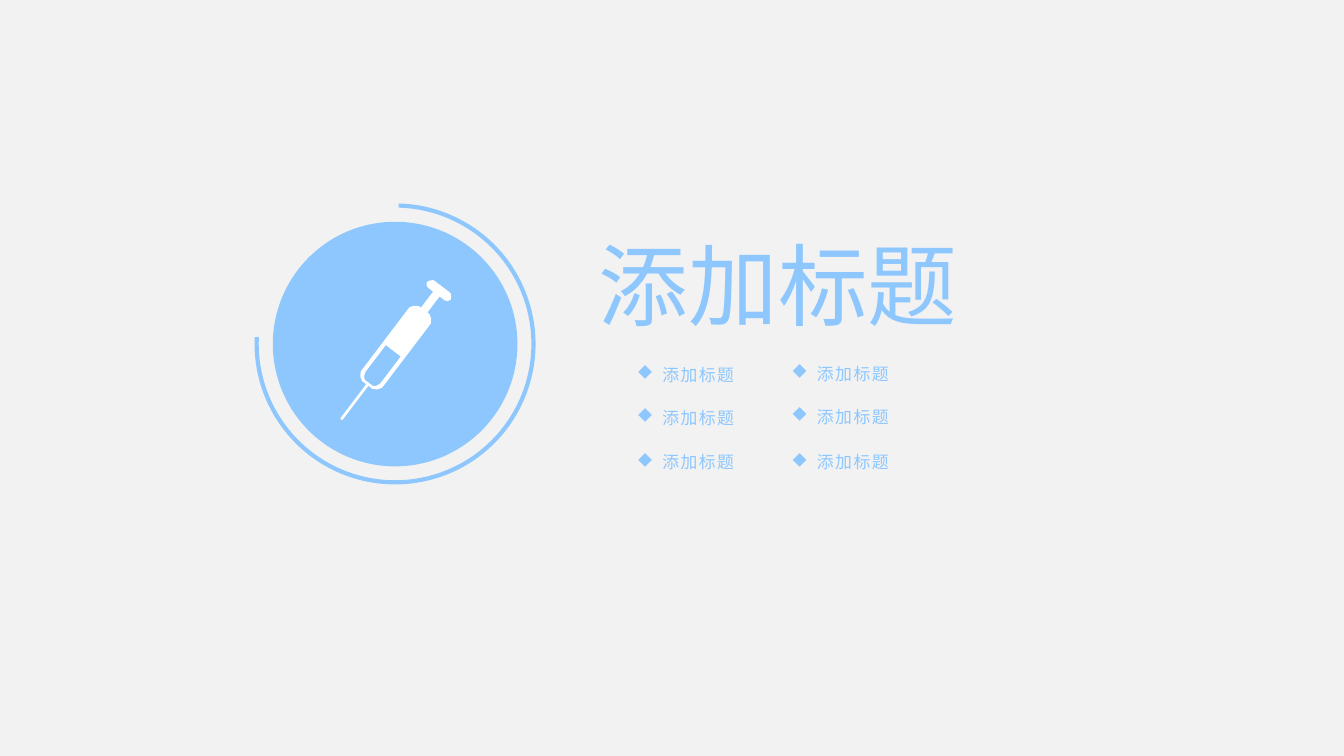
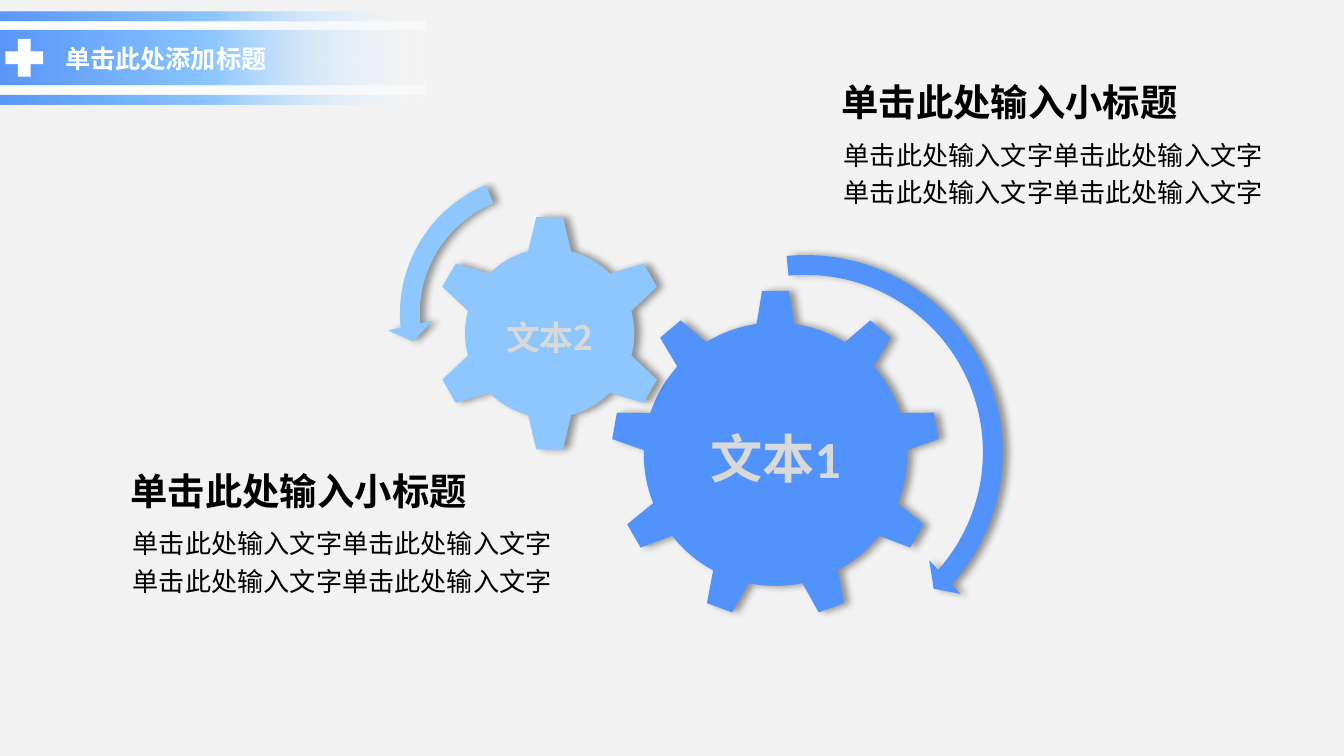
import math

import pptx
import pptx.util
import pptx.dml.color
import pptx.enum.shapes
import pptx.enum.text
import pptx.oxml.ns
from lxml import etree
from pptx.util import Inches

SHAPE = pptx.enum.shapes.MSO_SHAPE
ALIGN = pptx.enum.text.PP_ALIGN
MIDDLE = pptx.enum.text.MSO_ANCHOR.MIDDLE
GROW = pptx.enum.text.MSO_AUTO_SIZE.SHAPE_TO_FIT_TEXT

PAPER, WHITE, BLACK, GREY = "F2F2F2", "FFFFFF", "000000", "D9D9D9"
SKY, BLUE = "8DC7FE", "5293FB"
CJK, LATIN = "Noto Sans CJK SC", "Calibri"
DIAMOND = ("Wingdings", "u")

# Slide 1
COVER_TITLE = "添加标题"
TOPICS = [["添加标题", "添加标题"], ["添加标题", "添加标题"], ["添加标题", "添加标题"]]
TOPIC_COLUMNS = [(4.64, (2.59, 2.91, 3.24)), (5.79, (2.58, 2.9, 3.24))]
# Syringe half-profiles: (distance from needle tip, half-width)
SYRINGE_TIP, SYRINGE_ANGLE = (2.54, 3.12), 52.8
SYRINGE_BODY = [
    (0, 0.01), (0.32, 0.01), (0.32, 0.05), (0.34, 0.08), (0.37, 0.1),
    (0.97, 0.1), (1, 0.08), (1.02, 0.05), (1.02, 0.03), (1.17, 0.03),
    (1.17, 0.08), (1.18, 0.1), (1.2, 0.11), (1.22, 0.1), (1.24, 0.08),
]
SYRINGE_WINDOW = [(0.34, 0.04), (0.36, 0.06), (0.39, 0.07), (0.64, 0.07)]

# Slide 2
PAGE_TITLE = "单击此处添加标题"
BANNER_STOPS = [(0, BLUE, 95), (50, SKY, 100), (100, WHITE, 8)]
STRIPE_STOPS = [(0, WHITE, 100), (50, WHITE, 100), (100, WHITE, 50)]
BANDS = [(0.09, 0.69, BANNER_STOPS), (0.16, 0.06, STRIPE_STOPS), (0.64, 0.06, STRIPE_STOPS)]
GEARS = [
    (dict(text="文本1", size=28, font=LATIN), BLUE,
     dict(center=(5.77, 3.38), teeth=9, root=0.98, tip=1.22, root_half=0.14, tip_half=0.1)),
    (dict(text="文本2", size=18, font=CJK), SKY,
     dict(center=(4.09, 2.48), teeth=6, root=0.63, tip=0.87, root_half=0.16, tip_half=0.1)),
]
# Thickness %, head angle, end angle, start angle, head width %
TURN_ARROWS = [
    (SHAPE.CIRCULAR_ARROW, (4.43, 1.8, 3.13, 3.13), BLUE, (4.7, 4.98, 41.88, 264.46, 5.5)),
    (SHAPE.LEFT_CIRCULAR_ARROW, (2.88, 1.2, 2.27, 2.27), SKY, (6.5, 7.17, 174.82, 247.3, 7.5)),
]
NOTES = [
    (0.89, 3.42, "单击此处输入小标题", ["单击此处输入文字单击此处输入文字"] * 2),
    (6.18, 0.53, "单击此处输入小标题", ["单击此处输入文字单击此处输入文字"] * 2),
]


def rgb(color):
    return pptx.dml.color.RGBColor.from_string(color)


def add_xml(parent, tag, **attrs):
    child = etree.SubElement(parent, pptx.oxml.ns.qn(tag))
    for name, value in attrs.items():
        child.set(name, str(value))
    return child


def add_color(parent, color, alpha):
    clr = add_xml(parent, "a:srgbClr", val=color)
    if alpha < 100:
        add_xml(clr, "a:alpha", val=alpha * 1000)


def angle_adj(degrees):
    """Adjustment value for an angle, as python-pptx scales it."""
    return degrees * 0.6


def write(tf, text, size, color, font=CJK, bold=False, align=None, spacing=None,
          bullet=None, tracking=None):
    """Fill a text frame; a list of strings gives one paragraph each."""
    lines = [text] if isinstance(text, str) else text
    for i, line in enumerate(lines):
        p = tf.add_paragraph() if i else tf.paragraphs[0]
        p.alignment = align
        if spacing:
            p.line_spacing = spacing
        if bullet:
            pPr = p._p.get_or_add_pPr()
            pPr.set("marL", str(Inches(0.19)))
            pPr.set("indent", str(-Inches(0.19)))
            add_xml(pPr, "a:buFont", typeface=bullet[0], charset=2)
            add_xml(pPr, "a:buChar", char=bullet[1])
        r = p.add_run()
        r.text = line
        r.font.size, r.font.bold = pptx.util.Pt(size), bold
        r.font.name, r.font.color.rgb = font, rgb(color)
        rPr = r._r.get_or_add_rPr()
        add_xml(rPr, "a:ea", typeface=font)
        if tracking:
            rPr.set("spc", str(round(tracking * 100)))


def add_text(s, box, text, size, color, inset=True, **fmt):
    tf = s.shapes.add_textbox(*map(Inches, box)).text_frame
    tf.word_wrap = True
    if inset:
        tf.auto_size = GROW
    else:
        tf.margin_left = tf.margin_right = tf.margin_top = tf.margin_bottom = 0
        tf.vertical_anchor = MIDDLE
    write(tf, text, size, color, **fmt)


def paint(sp, color=None, shadow=False):
    sp.shadow.inherit = False
    sp.line.fill.background()
    if color:
        sp.fill.solid()
        sp.fill.fore_color.rgb = rgb(color)
    else:
        sp.fill.background()
    if shadow:
        effects = sp._element.spPr.find(pptx.oxml.ns.qn("a:effectLst"))
        outer = add_xml(effects, "a:outerShdw", blurRad=pptx.util.Pt(4),
                        dist=pptx.util.Pt(3), dir=0, algn="l", rotWithShape=0)
        add_color(outer, BLACK, 40)
    return sp


def add_shape(shapes, kind, box, color=None, shadow=False):
    return paint(shapes.add_shape(kind, *map(Inches, box)), color, shadow)


def add_outline(shapes, contours, color, shadow=False):
    """Closed freeform; further contours cut holes."""
    builder = None
    for contour in contours:
        points = [(Inches(x), Inches(y)) for x, y in contour]
        if builder is None:
            builder = shapes.build_freeform(*points[0], scale=1.0)
        else:
            builder.move_to(*points[0])
        builder.add_line_segments(points[1:], close=True)
    return paint(builder.convert_to_shape(), color, shadow)


def fill_gradient(sp, stops):
    sp.fill.gradient()
    sp.fill.gradient_angle = 0
    gs_list = sp._element.spPr.find(".//" + pptx.oxml.ns.qn("a:gsLst"))
    for gs in list(gs_list):
        gs_list.remove(gs)
    for pos, color, alpha in stops:
        add_color(add_xml(gs_list, "a:gs", pos=pos * 1000), color, alpha)


def syringe_contour(profile):
    """Mirror a half-profile and turn it onto the syringe axis."""
    x0, y0 = SYRINGE_TIP
    c, n = math.cos(math.radians(SYRINGE_ANGLE)), math.sin(math.radians(SYRINGE_ANGLE))
    sides = profile + [(u, -v) for u, v in reversed(profile)]
    return [(x0 + u * c + v * n, y0 - u * n + v * c) for u, v in sides]


def gear_contour(center, teeth, root, tip, root_half, tip_half, steps=8):
    pitch = 2 * math.pi / teeth
    root_turn, tip_turn = math.asin(root_half / root), math.asin(tip_half / tip)
    gap = pitch - 2 * root_turn
    points = []
    for i in range(teeth):
        mid = i * pitch
        polar = [(tip, mid - tip_turn), (tip, mid + tip_turn)]
        polar += [(root, mid + root_turn + gap * k / steps) for k in range(steps + 1)]
        points += [(center[0] + d * math.sin(a), center[1] - d * math.cos(a)) for d, a in polar]
    return points


def new_slide(prs):
    s = prs.slides.add_slide(prs.slide_layouts[6])
    s.background.fill.solid()
    s.background.fill.fore_color.rgb = rgb(PAPER)
    return s


def build_cover(prs):
    s = new_slide(prs)
    ring = add_shape(s.shapes, SHAPE.ARC, (1.91, 1.53, 2.06, 2.06))
    ring.adjustments[0], ring.adjustments[1] = angle_adj(271.47), angle_adj(182.82)
    ring.line.color.rgb = rgb(SKY)
    ring.line.width = pptx.util.Pt(2.25)
    icon = s.shapes.add_group_shape().shapes
    add_shape(icon, SHAPE.FLOWCHART_CONNECTOR, (2.03, 1.65, 1.82, 1.82), SKY)
    add_outline(icon, map(syringe_contour, (SYRINGE_BODY, SYRINGE_WINDOW)), WHITE)
    add_text(s, (3.65, 1.66, 4.28, 0.91), COVER_TITLE, 48, SKY, align=ALIGN.CENTER)
    for i, row in enumerate(TOPICS):
        for (left, tops), topic in zip(TOPIC_COLUMNS, row):
            add_text(s, (left, tops[i], 1.1, 0.3), topic, 9, SKY, spacing=1.5,
                     bullet=DIAMOND, tracking=0.8)


def add_header(s, title):
    for top, height, stops in BANDS:
        fill_gradient(add_shape(s.shapes, SHAPE.RECTANGLE, (0, top, 3.17, height)), stops)
    cross = add_shape(s.shapes, SHAPE.CROSS, (0.04, 0.29, 0.28, 0.28), WHITE)
    cross.adjustments[0] = 0.33
    add_text(s, (0.39, 0.27, 2.21, 0.33), title, 13.5, WHITE, bold=True)


def build_gears(prs):
    s = new_slide(prs)
    add_header(s, PAGE_TITLE)
    for label, color, form in GEARS:
        sp = add_outline(s.shapes, [gear_contour(**form)], color, shadow=True)
        sp.text_frame.vertical_anchor = MIDDLE
        write(sp.text_frame, color=GREY, bold=True, align=ALIGN.CENTER, spacing=1.2, **label)
    for kind, box, color, (thick, head, end, start, width) in TURN_ARROWS:
        sp = add_shape(s.shapes, kind, box, color, shadow=True)
        values = (thick / 100, *map(angle_adj, (head, end, start)), width / 100)
        for i, value in enumerate(values):
            sp.adjustments[i] = value
    for left, top, heading, body in NOTES:
        add_text(s, (left, top + 0.41, 3.56, 0.67), body, 14, BLACK, spacing=1.2)
        add_text(s, (left + 0.08, top, 2.73, 0.39), heading, 20, BLACK, inset=False,
                 bold=True, spacing=1.2)


def main():
    prs = pptx.Presentation()
    prs.slide_width = Inches(10)
    prs.slide_height = prs.slide_width * 9 // 16
    build_cover(prs)
    build_gears(prs)
    prs.save("out.pptx")


if __name__ == "__main__":
    main()
